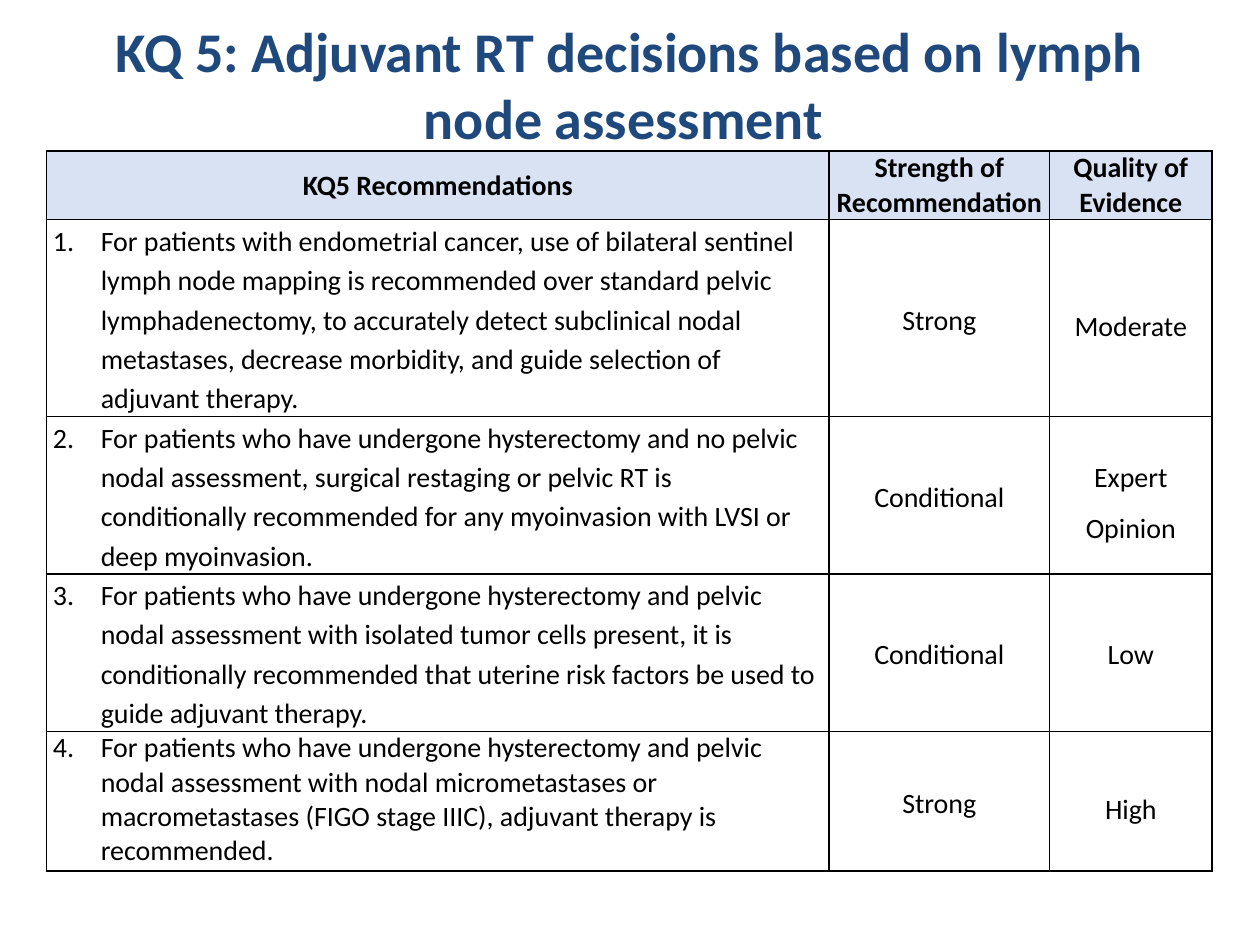
from lxml import etree
from pptx import Presentation
from pptx.dml.color import RGBColor
from pptx.enum.text import MSO_ANCHOR, MSO_AUTO_SIZE, PP_ALIGN
from pptx.oxml.ns import qn
from pptx.util import Inches, Pt

FONT = "Calibri"
COLORS = {"title": "1F497D", "text": "000000", "border": "000000", "header": "D9E2F3"}
TITLE = "KQ 5: Adjuvant RT decisions based on lymph node assessment "
HEADERS = ["KQ5 Recommendations", "Strength of Recommendation", "Quality of Evidence"]
RECOMMENDATIONS = [
    ("For patients with endometrial cancer, use of bilateral sentinel lymph node mapping is "
     "recommended over standard pelvic lymphadenectomy, to accurately detect subclinical nodal "
     "metastases, decrease morbidity, and guide selection of adjuvant therapy.",
     "Strong", "Moderate"),
    ("For patients who have undergone hysterectomy and no pelvic nodal assessment, surgical "
     "restaging or pelvic RT is conditionally recommended for any myoinvasion with LVSI or "
     "deep myoinvasion.",
     "Conditional", "Expert Opinion"),
    ("For patients who have undergone hysterectomy and pelvic nodal assessment with isolated "
     "tumor cells present, it is conditionally recommended that uterine risk factors be used "
     "to guide adjuvant therapy.",
     "Conditional", "Low"),
    ("For patients who have undergone hysterectomy and pelvic nodal assessment with nodal "
     "micrometastases or macrometastases (FIGO stage IIIC), adjuvant therapy is recommended.",
     "Strong", "High"),
]
LINE_SPACING = [(1.15, 1.15, 1.5), (1.15, 1.15, 1.5), (1.15, 1.15, 1.15), (1.0, 1.15, 1.5)]
COLUMN_WIDTHS = [6.21, 1.75, 1.29]
ROW_HEIGHTS = [0.52, 1.39, 1.11, 1.11, 1.11]


def style_font(font, size, color, bold=False):
    font.name = FONT
    font.size = Pt(size)
    font.bold = bold
    font.color.rgb = RGBColor.from_string(COLORS[color])


def add_borders(cell):
    properties = cell._tc.get_or_add_tcPr()
    for index, side in enumerate(("lnL", "lnR", "lnT", "lnB")):
        line = etree.Element(qn(f"a:{side}"), w=str(Pt(1)))
        fill = etree.SubElement(line, qn("a:solidFill"))
        etree.SubElement(fill, qn("a:srgbClr"), val=COLORS["border"])
        properties.insert(index, line)


def number_paragraph(para, start):
    properties = para._p.get_or_add_pPr()
    properties.set("marL", str(Inches(0.38)))
    properties.set("indent", str(-Inches(0.38)))
    etree.SubElement(properties, qn("a:buFont"), typeface="+mj-lt")
    etree.SubElement(properties, qn("a:buAutoNum"), type="arabicPeriod", startAt=str(start))


def fill_cell(cell, text, spacing=None, number=None, header=False):
    cell.margin_left = cell.margin_right = Inches(0.05)
    cell.margin_top = cell.margin_bottom = 0
    cell.vertical_anchor = MSO_ANCHOR.TOP if number else MSO_ANCHOR.MIDDLE
    if header:
        cell.fill.solid()
        cell.fill.fore_color.rgb = RGBColor.from_string(COLORS["header"])
    else:
        cell.fill.background()
    add_borders(cell)
    cell.text_frame.text = text
    para = cell.text_frame.paragraphs[0]
    para.line_spacing = spacing
    if number:
        number_paragraph(para, number)
    else:
        para.alignment = PP_ALIGN.CENTER
    style_font(para.runs[0].font, 16, "text", bold=header)


def add_title(page, left, top, width, height):
    title = page.shapes.title
    title.left, title.top, title.width, title.height = map(Inches, (left, top, width, height))
    frame = title.text_frame
    frame.text = TITLE
    frame.word_wrap = True
    frame.auto_size = MSO_AUTO_SIZE.NONE
    frame.vertical_anchor = MSO_ANCHOR.TOP
    para = frame.paragraphs[0]
    para.alignment = PP_ALIGN.CENTER
    style_font(para.runs[0].font, 32, "title", bold=True)


def add_recommendations(page, left, top, width, height):
    table = page.shapes.add_table(
        len(ROW_HEIGHTS), len(COLUMN_WIDTHS), *map(Inches, (left, top, width, height))
    ).table
    table.horz_banding = False
    for column, column_width in zip(table.columns, COLUMN_WIDTHS):
        column.width = Inches(column_width)
    for row, row_height in zip(table.rows, ROW_HEIGHTS):
        row.height = Inches(row_height)
    for column, text in enumerate(HEADERS):
        fill_cell(table.cell(0, column), text, header=True)
    for number, (texts, spacings) in enumerate(zip(RECOMMENDATIONS, LINE_SPACING), 1):
        for column, (text, spacing) in enumerate(zip(texts, spacings)):
            fill_cell(table.cell(number, column), text, spacing,
                      number=number if column == 0 else None)


def main():
    deck = Presentation()
    deck.slide_width, deck.slide_height = Inches(10), Inches(7.5)
    page = deck.slides.add_slide(deck.slide_layouts[5])
    add_title(page, 0.5, 0.08, 9, 1.08)
    add_recommendations(page, 0.37, 1.2, sum(COLUMN_WIDTHS), sum(ROW_HEIGHTS))
    deck.save("out.pptx")


if __name__ == "__main__":
    main()
